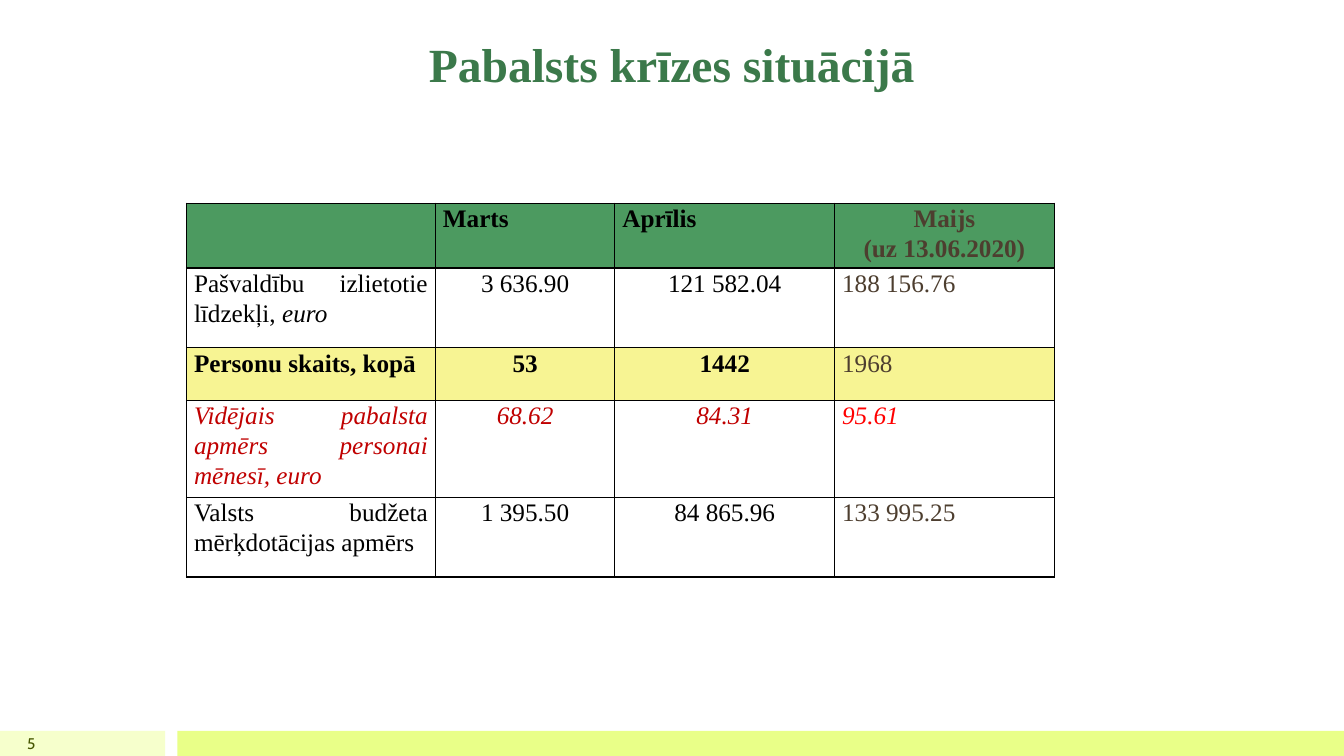
from lxml import etree
from pptx import Presentation
from pptx.dml.color import RGBColor
from pptx.enum.shapes import MSO_SHAPE
from pptx.enum.text import MSO_ANCHOR, PP_ALIGN
from pptx.oxml.ns import qn
from pptx.util import Pt

RECTANGLE = MSO_SHAPE.RECTANGLE
TOP, MIDDLE = MSO_ANCHOR.TOP, MSO_ANCHOR.MIDDLE
LEFT, CENTER, RIGHT, JUSTIFY = (
    PP_ALIGN.LEFT, PP_ALIGN.CENTER, PP_ALIGN.RIGHT, PP_ALIGN.JUSTIFY)

WIDTH, HEIGHT = 960, 540
FOOTER_TOP, FOOTER_HEIGHT = 522, 18
BLACK, BROWN, DARK_RED, RED = "000000", "4D3E2F", "C00000", "FF0000"
HEADER_GREEN, TOTAL_YELLOW = "4C9A60", "F7F493"

COLUMN_WIDTHS = [177.84, 128.16, 156.96, 156.96]
HEADER = ["", "Marts", "Aprīlis", "Maijs\n(uz 13.06.2020)"]
ALIGNMENTS = [JUSTIFY, CENTER, CENTER, JUSTIFY]
# Label and values, row height, fill, main colour, last column colour, bold, italic
BENEFIT_ROWS = [
    (["Pašvaldību izlietotie līdzekļi, ", "3 636.90", "121 582.04", "188 156.76"],
     57, None, BLACK, BROWN, False, False),
    (["Personu skaits, kopā", "53", "1442", "1968"],
     37.5, TOTAL_YELLOW, BLACK, BROWN, True, False),
    (["Vidējais pabalsta apmērs personai mēnesī, euro", "68.62", "84.31", "95.61"],
     57, None, DARK_RED, RED, False, True),
    (["Valsts budžeta mērķdotācijas apmērs", "1 395.50", "84 865.96", "133 995.25"],
     57, None, BLACK, BROWN, False, False),
]


def rgb(value):
    return RGBColor.from_string(value)


class SlideBuilder:
    serif = "Times New Roman"
    sans = "Cabin"
    table_size = 18

    def __init__(self, slide):
        self.slide = slide

    def style_run(self, run, size, color, bold=False, italic=False, font=serif):
        run.font.name = font
        run.font.size = Pt(size)
        run.font.bold = bold
        run.font.italic = italic
        run.font.color.rgb = rgb(color)

    def fill_frame(self, frame, text, align, size, color, spacing=None, **style):
        """Put text in a frame and format its paragraphs and runs."""
        frame.text = text
        frame.word_wrap = True
        for paragraph in frame.paragraphs:
            paragraph.alignment = align
            paragraph.line_spacing = spacing
            paragraph.font.size = Pt(size)
            for run in paragraph.runs:
                self.style_run(run, size, color, **style)

    def bar(self, left, width, color):
        bar = self.slide.shapes.add_shape(
            RECTANGLE, Pt(left), Pt(FOOTER_TOP), Pt(width), Pt(FOOTER_HEIGHT))
        bar.shadow.inherit = False
        bar.fill.solid()
        bar.fill.fore_color.rgb = rgb(color)
        bar.line.fill.background()

    def text(self, box, text, align, size, color, anchor=TOP, **style):
        frame = self.slide.shapes.add_textbox(*map(Pt, box)).text_frame
        frame.vertical_anchor = anchor
        self.fill_frame(frame, text, align, size, color, **style)

    def table(self, left, top, widths, heights):
        table = self.slide.shapes.add_table(
            len(heights), len(widths), Pt(left), Pt(top),
            Pt(sum(widths)), Pt(sum(heights))).table
        table.first_row = table.horz_banding = False
        for column, width in zip(table.columns, widths):
            column.width = Pt(width)
        for row, height in zip(table.rows, heights):
            row.height = Pt(height)
        return table

    def border(self, cell):
        properties = cell._tc.get_or_add_tcPr()
        for side in ("a:lnL", "a:lnR", "a:lnT", "a:lnB"):
            line = etree.SubElement(properties, qn(side), w=str(Pt(1)))
            fill = etree.SubElement(line, qn("a:solidFill"))
            etree.SubElement(fill, qn("a:srgbClr"), val=BLACK)

    def cell(self, cell, text, align, color, fill, **style):
        cell.margin_left = cell.margin_right = Pt(5.4)
        cell.margin_top = cell.margin_bottom = Pt(0)
        self.border(cell)
        if fill:
            cell.fill.solid()
            cell.fill.fore_color.rgb = rgb(fill)
        else:
            cell.fill.background()
        self.fill_frame(cell.text_frame, text, align, self.table_size, color,
                        spacing=1.07, **style)


def main():
    presentation = Presentation()
    presentation.slide_width, presentation.slide_height = Pt(WIDTH), Pt(HEIGHT)
    builder = SlideBuilder(
        presentation.slides.add_slide(presentation.slide_layouts[6]))

    builder.bar(0, 118, "F6FFCC")
    builder.bar(126.72, WIDTH - 126.72, "E9FF88")
    builder.text((0, FOOTER_TOP, 32.4, FOOTER_HEIGHT), "5", RIGHT, 11, "455500",
                 anchor=MIDDLE, font=builder.sans)

    benefits = builder.table(133.2, 145.2, COLUMN_WIDTHS,
                             [37.5] + [row[1] for row in BENEFIT_ROWS])
    last = len(HEADER) - 1
    for column, heading in enumerate(HEADER):
        builder.cell(benefits.cell(0, column), heading,
                     CENTER if column == last else LEFT,
                     BROWN if column == last else BLACK, HEADER_GREEN, bold=True)

    for row, (texts, _, fill, color, last_color, bold, italic) in enumerate(BENEFIT_ROWS, 1):
        for column, (text, align) in enumerate(zip(texts, ALIGNMENTS)):
            is_last = column == last
            builder.cell(benefits.cell(row, column), text, align,
                         last_color if is_last else color, fill,
                         bold=bold and not is_last, italic=italic)

    currency = benefits.cell(1, 0).text_frame.paragraphs[0].add_run()
    currency.text = "euro"
    builder.style_run(currency, builder.table_size, BLACK, italic=True)

    builder.text((110.88, 21.6, 738, 92.88), "Pabalsts krīzes situācijā",
                 CENTER, 34, "3B794A", bold=True)
    presentation.save("out.pptx")


if __name__ == "__main__":
    main()
